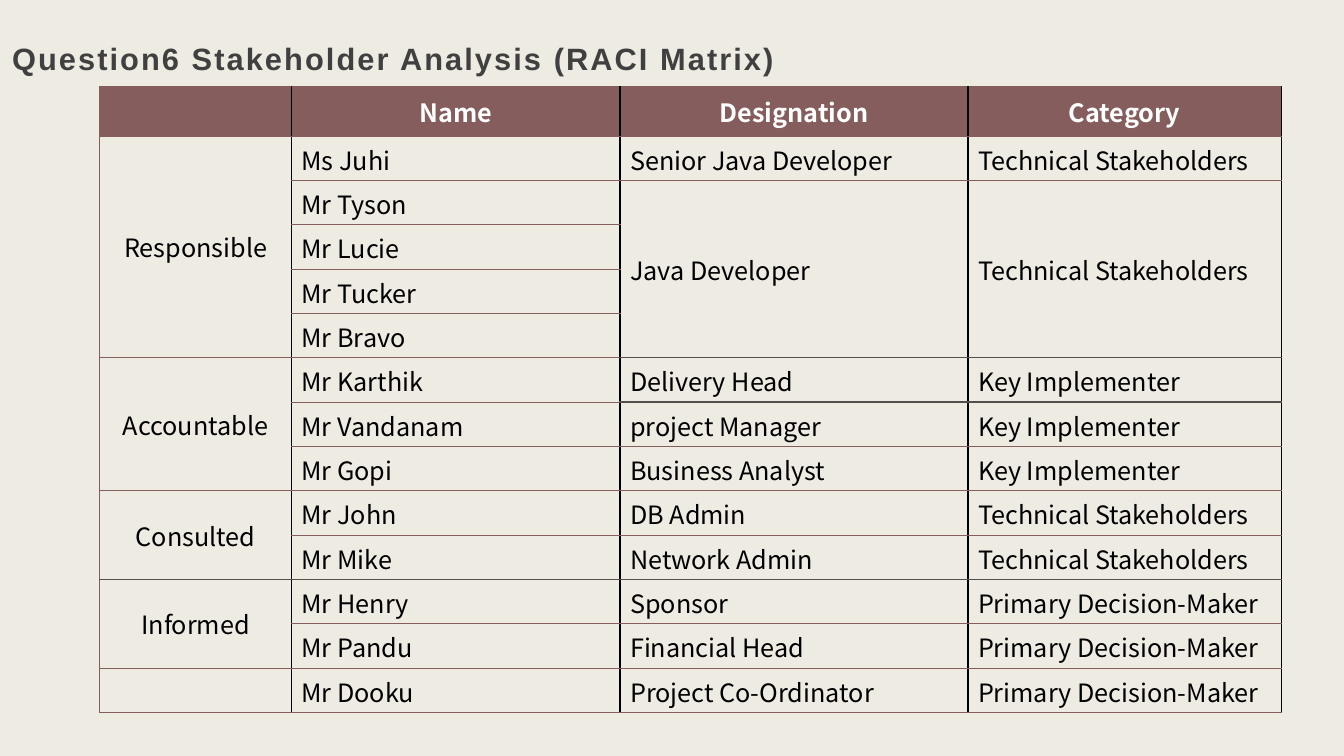
import lxml.etree
import pptx
import pptx.dml.color
import pptx.enum.text
import pptx.oxml.ns
import pptx.util

Inches = pptx.util.Inches
Pt = pptx.util.Pt
Align = pptx.enum.text.PP_ALIGN
Anchor = pptx.enum.text.MSO_ANCHOR
qn = pptx.oxml.ns.qn

COLORS = {
    "background": "EEEBE2",
    "title": "404040",
    "rose": "855D5D",
    "slate": "564E4E",
    "black": "000000",
    "white": "FFFFFF",
}
HEADINGS = ["", "Name", "Designation", "Category"]
COLUMN_WIDTHS = [1.9, 3.26, 3.45, 3.11]
HEADER_HEIGHT = 0.49
ROW_HEIGHT = 0.44
TECHNICAL = "Technical Stakeholders"
IMPLEMENTER = "Key Implementer"
DECIDER = "Primary Decision-Maker"
STAKEHOLDERS = [
    ["Responsible", "Ms Juhi", "Senior Java Developer", TECHNICAL],
    ["", "Mr Tyson", "Java Developer", TECHNICAL],
    ["", "Mr Lucie", "", ""],
    ["", "Mr Tucker", "", ""],
    ["", "Mr Bravo", "", ""],
    ["Accountable", "Mr Karthik", "Delivery Head", IMPLEMENTER],
    ["", "Mr Vandanam", "project Manager", IMPLEMENTER],
    ["", "Mr Gopi", "Business Analyst", IMPLEMENTER],
    ["Consulted", "Mr John", "DB Admin", TECHNICAL],
    ["", "Mr Mike", "Network Admin", TECHNICAL],
    ["Informed", "Mr Henry", "Sponsor", DECIDER],
    ["", "Mr Pandu", "Financial Head", DECIDER],
    ["", "Mr Dooku", "Project Co-Ordinator", DECIDER],
]
MERGES = [(1, 0, 5), (2, 2, 4), (2, 3, 4), (6, 0, 3), (9, 0, 2), (11, 0, 2)]
SLATE_RULES = {(6, 2), (6, 3), (7, 2), (7, 3)} | {(11, column) for column in range(4)}


class RaciSlide:
    def __init__(self, presentation):
        self.slide = presentation.slides.add_slide(presentation.slide_layouts[6])
        fill = self.slide.background.fill
        fill.solid()
        fill.fore_color.rgb = self.color("background")

    def color(self, name):
        return pptx.dml.color.RGBColor.from_string(COLORS[name])

    def style(self, paragraph, font_name, size, color, bold):
        for run in paragraph.runs:
            run.font.name = font_name
            run.font.size = Pt(size)
            run.font.bold = bold
            run.font.color.rgb = self.color(color)

    def title(self, text, left, top, width, height):
        box = self.slide.shapes.add_textbox(
            Inches(left), Inches(top), Inches(width), Inches(height))
        frame = box.text_frame
        frame.word_wrap = True
        frame.vertical_anchor = Anchor.BOTTOM
        frame.margin_left = frame.margin_right = frame.margin_top = Inches(0.12)
        frame.margin_bottom = Inches(0.1)
        frame.text = text
        heading = frame.paragraphs[0]
        self.style(heading, "Arial", 22, "title", True)
        heading.runs[0]._r.get_or_add_rPr().set("spc", "150")

    def border(self, cell, side, color, width):
        properties = cell._tc.get_or_add_tcPr()
        line = lxml.etree.SubElement(properties, qn(f"a:ln{side}"), w=str(Pt(width)))
        fill = lxml.etree.SubElement(line, qn("a:solidFill"))
        lxml.etree.SubElement(fill, qn("a:srgbClr"), val=COLORS[color])

    def rule(self, row, column):
        return ("slate", 1) if (row, column) in SLATE_RULES else ("rose", 0.75)

    def cell(self, cell, text, row, column):
        header = row == 0
        if not cell.is_spanned:
            span = cell.span_height if cell.is_merge_origin else 1
            edge = ("rose", 0.75) if column == 0 and not header else ("black", 1)
            if column == 0:
                edge = ("rose", 0.75)
            self.border(cell, "L", *edge)
            self.border(cell, "R", "black", 1)
            self.border(cell, "T", *self.rule(row, column))
            self.border(cell, "B", *self.rule(row + span, column))
        if header:
            cell.fill.solid()
            cell.fill.fore_color.rgb = self.color("rose")
        else:
            cell.fill.background()
        if header or cell.is_merge_origin:
            cell.vertical_anchor = Anchor.MIDDLE
        cell.text_frame.text = text
        paragraph = cell.text_frame.paragraphs[0]
        paragraph.alignment = Align.CENTER if header or column == 0 else Align.LEFT
        self.style(paragraph, "Noto Sans CJK JP", 18,
                   "white" if header else "black", header)
        if not text:
            paragraph.font.size = Pt(18)

    def matrix(self, left, top):
        rows = [HEADINGS] + STAKEHOLDERS
        heights = [HEADER_HEIGHT] + [ROW_HEIGHT] * len(STAKEHOLDERS)
        matrix = self.slide.shapes.add_table(
            len(rows), len(HEADINGS), Inches(left), Inches(top),
            Inches(sum(COLUMN_WIDTHS)), Inches(sum(heights))).table
        matrix.horz_banding = False
        for column, width in zip(matrix.columns, COLUMN_WIDTHS):
            column.width = Inches(width)
        for row, height in zip(matrix.rows, heights):
            row.height = Inches(height)
        for row, column, span in MERGES:
            matrix.cell(row, column).merge(matrix.cell(row + span - 1, column))
        for row, texts in enumerate(rows):
            for column, text in enumerate(texts):
                self.cell(matrix.cell(row, column), text, row, column)


def main():
    presentation = pptx.Presentation()
    presentation.slide_width = Inches(13.33)
    presentation.slide_height = Inches(7.5)
    raci = RaciSlide(presentation)
    raci.title("Question6 Stakeholder Analysis (RACI Matrix)", 0, -0.61, 11.84, 1.47)
    raci.matrix(0.99, 0.86)
    presentation.save("out.pptx")


if __name__ == "__main__":
    main()
